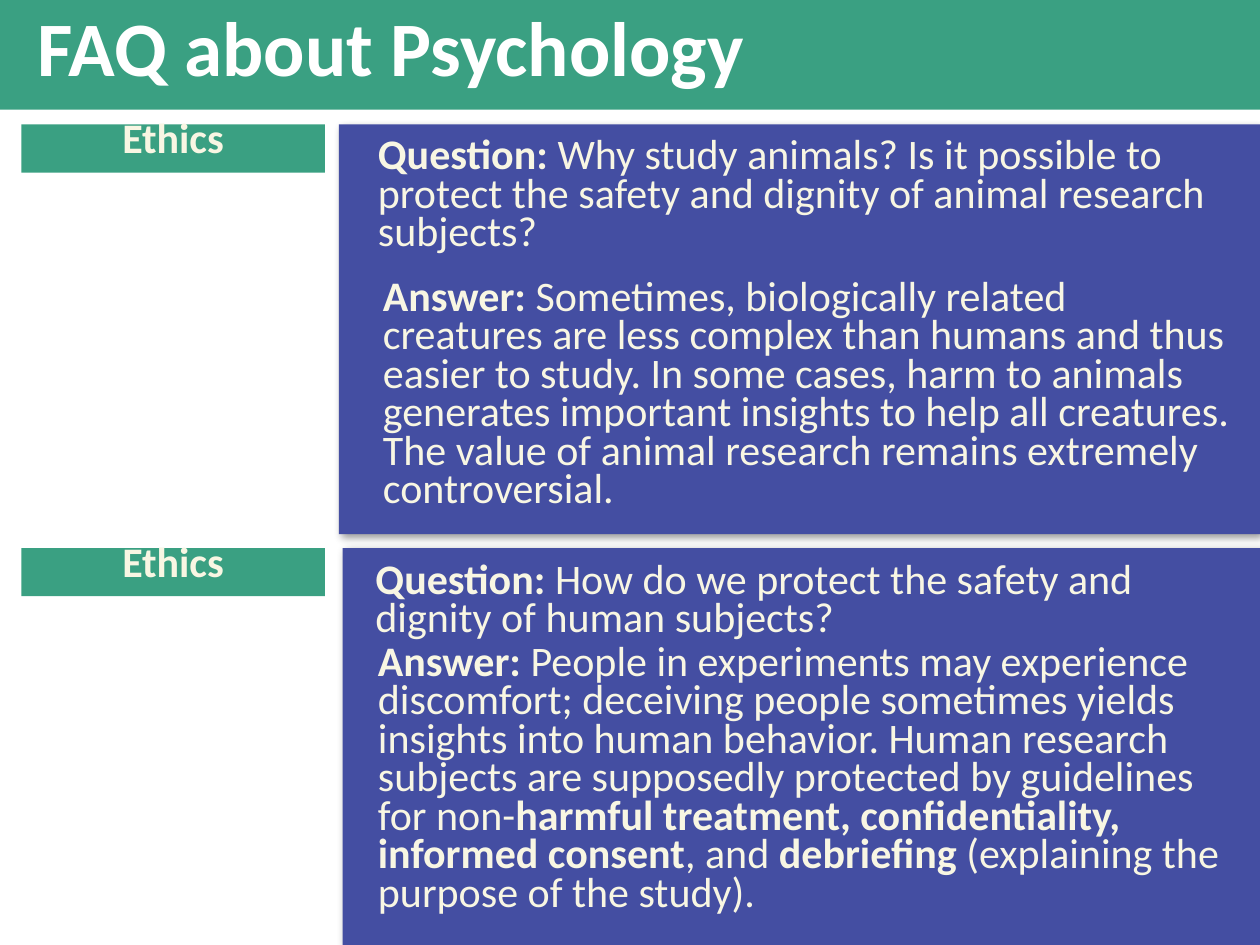
from lxml import etree
from pptx import Presentation
from pptx.dml.color import RGBColor
from pptx.enum.shapes import MSO_SHAPE
from pptx.enum.text import MSO_ANCHOR, MSO_AUTO_SIZE, PP_ALIGN
from pptx.oxml import parse_xml
from pptx.util import Cm, Pt

RECT = MSO_SHAPE.RECTANGLE
TOP, MIDDLE = MSO_ANCHOR.TOP, MSO_ANCHOR.MIDDLE
NO_FIT, GROW = MSO_AUTO_SIZE.NONE, MSO_AUTO_SIZE.SHAPE_TO_FIT_TEXT
LEFT, CENTER = PP_ALIGN.LEFT, PP_ALIGN.CENTER

GREEN = RGBColor(0x3A, 0xA0, 0x82)
BLUE = RGBColor(0x44, 0x4E, 0xA2)
CREAM = RGBColor(0xF8, 0xF6, 0xE3)
WHITE = RGBColor(0xFF, 0xFF, 0xFF)

SHADOW = (
    '<a:effectLst xmlns:a="http://schemas.openxmlformats.org/drawingml/2006/main">'
    '<a:outerShdw blurRad="63500" dist="38100" dir="2700000" algn="tl" rotWithShape="0">'
    '<a:srgbClr val="000000"><a:alpha val="40000"/></a:srgbClr>'
    '</a:outerShdw></a:effectLst>'
)


def write(tf, runs, size, spacing, color, align=LEFT):
    """Fill the first paragraph with (text, bold) runs at an exact line spacing."""
    tf.word_wrap = True
    p = tf.paragraphs[0]
    p.alignment = align
    p.line_spacing = Pt(spacing)
    p.space_before = Pt(0)
    for text, bold in runs:
        r = p.add_run()
        r.text = text
        r.font.name = "Calibri"
        r.font.size = Pt(size)
        r.font.bold = bold
        r.font.color.rgb = color


def add_box(left, top, width, height, color):
    sp = s.shapes.add_shape(RECT, Cm(left), Cm(top), Cm(width), Cm(height))
    sp.fill.solid()
    sp.fill.fore_color.rgb = color
    sp.line.fill.background()
    sp.shadow.inherit = False
    return sp


prs = Presentation()
prs.slide_width, prs.slide_height = Cm(25.4), Cm(19.05)
s = prs.slides.add_slide(prs.slide_layouts[5])

title = s.shapes.title
title.left, title.top, title.width, title.height = Cm(0), Cm(0), Cm(25.4), Cm(2.21)
title.fill.solid()
title.fill.fore_color.rgb = GREEN
tf = title.text_frame
tf.auto_size = NO_FIT
tf.vertical_anchor = MIDDLE
tf.margin_left = Cm(0.76)
write(tf, [("FAQ about Psychology", True)], 44, 42, WHITE)

# Each section: panel left, top and height, then its texts as (left, top, height, runs)
sections = [
    (6.83, 2.51, 8.26, [
        (7.37, 2.69, 3.78, [
            ("Question: ", True),
            ("Why study animals? Is it possible to protect the safety and dignity "
             "of animal research subjects?", False),
        ]),
        (7.47, 5.54, 7.47, [
            ("Answer: ", True),
            ("Sometimes, biologically related creatures are less complex than humans "
             "and thus easier to study. In some cases, harm to animals generates "
             "important insights to help all creatures. The value of animal research "
             "remains extremely controversial.", False),
        ]),
    ]),
    (6.91, 11.05, 8, [
        (7.32, 11.25, 1.85, [
            ("Question: ", True),
            ("How do we protect the safety and dignity of human subjects?", False),
        ]),
        (7.37, 12.9, 5.08, [
            ("Answer: ", True),
            ("People in experiments may experience discomfort; deceiving people "
             "sometimes yields insights into human behavior. Human research subjects "
             "are supposedly protected by guidelines for non-", False),
            ("harmful treatment, confidentiality, informed consent", True),
            (", and ", False),
            ("debriefing", True),
            (" (explaining the purpose of the study).", False),
        ]),
    ]),
]

for panel_left, top, height, texts in sections:
    panel = add_box(panel_left, top, 18.57, height, BLUE)
    spPr = panel.element.spPr
    for effects in spPr.findall("{*}effectLst"):
        spPr.replace(effects, parse_xml(SHADOW))

    label = add_box(0.43, top, 6.12, 0.97, GREEN)
    tf = label.text_frame
    tf.vertical_anchor = TOP
    tf.auto_size = GROW
    write(tf, [("Ethics", True)], 24, 18, CREAM, CENTER)

    for text_left, text_top, text_height, runs in texts:
        box = s.shapes.add_textbox(Cm(text_left), Cm(text_top), Cm(17.63), Cm(text_height))
        write(box.text_frame, runs, 24, 22, CREAM)

prs.save("out.pptx")
